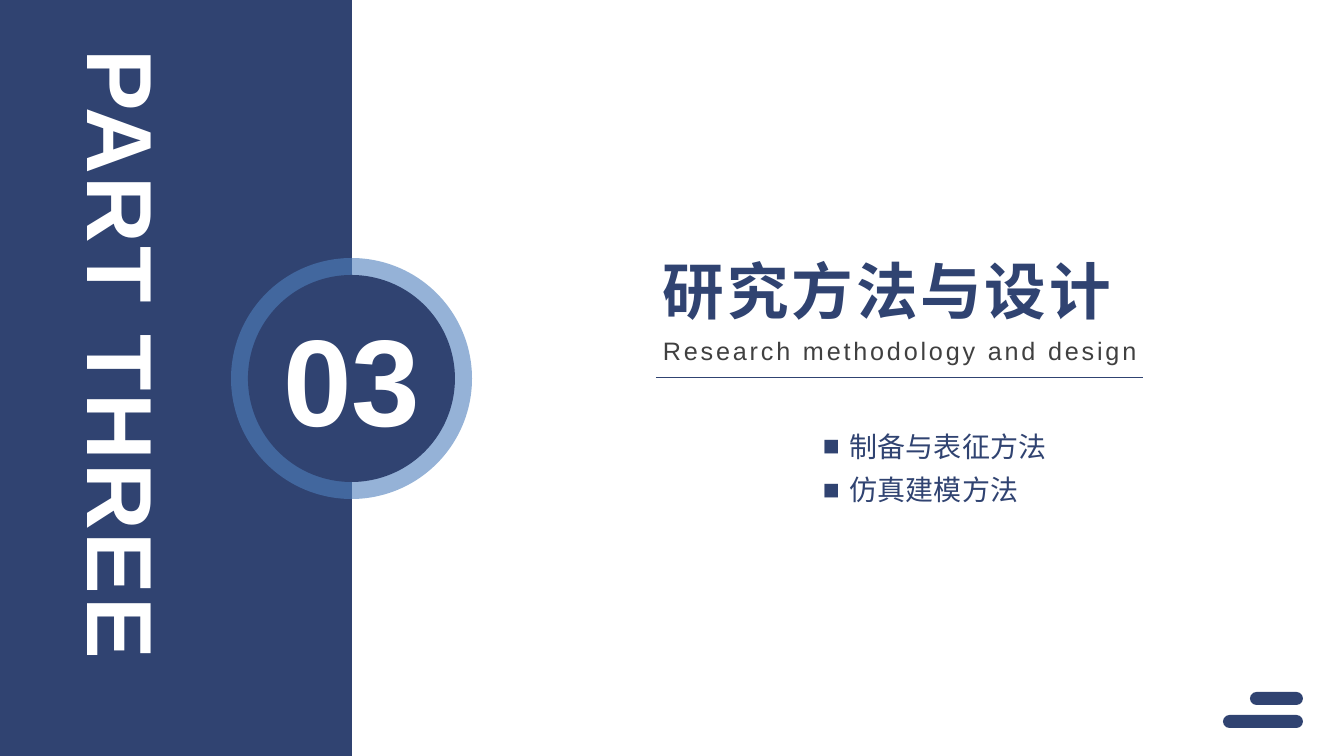
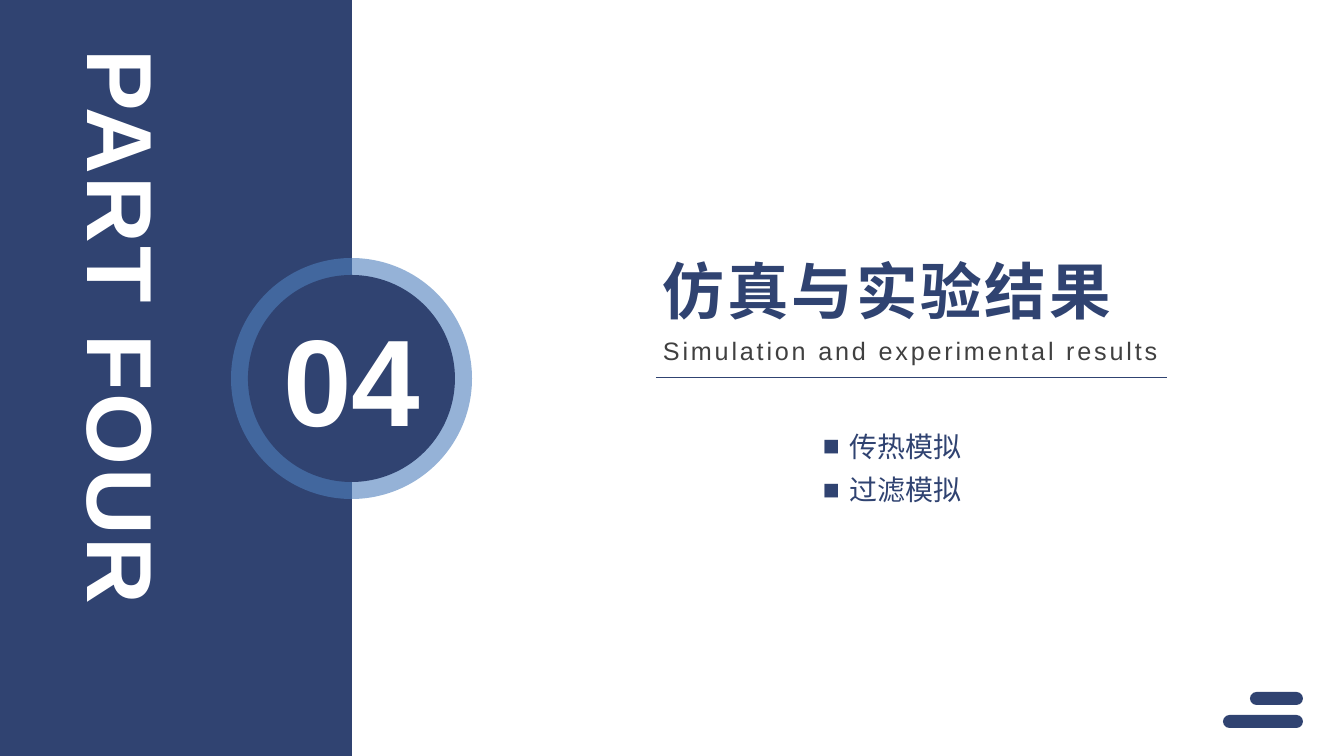
from pptx import Presentation
from pptx.dml.color import RGBColor
from pptx.enum.lang import MSO_LANGUAGE_ID
from pptx.enum.shapes import MSO_CONNECTOR, MSO_SHAPE
from pptx.enum.text import MSO_ANCHOR, PP_ALIGN
from pptx.oxml.ns import qn
from pptx.oxml.xmlchemy import OxmlElement
from pptx.util import Emu, Pt

NAVY, BLUE, GREY, WHITE = "304371", "4F80BD", "404040", "FFFFFF"
FONT = "Arial"
WIDE, HIGH = 1344, 756
PARTS = [
    ("03", "PART THREE", "研究方法与设计", "Research methodology and design",
     487, ["制备与表征方法", "仿真建模方法"]),
    ("04", "PART FOUR", "仿真与实验结果", "Simulation and experimental results",
     511, ["传热模拟", "过滤模拟"]),
]


def px(*sizes):
    """Turn lengths in px into a list of EMU."""
    return [Emu(round(size * 914400 / 100.8)) for size in sizes]


def color(code):
    return RGBColor.from_string(code)


def child(parent, tag, **attrs):
    node = OxmlElement(tag)
    for key, value in attrs.items():
        node.set(key, value)
    parent.append(node)
    return node


def shape(shapes, kind, box, fill, alpha=None):
    item = shapes.add_shape(kind, *px(*box))
    item.shadow.inherit = False
    item.fill.solid()
    item.fill.fore_color.rgb = color(fill)
    item.line.fill.background()
    if alpha:
        tint = next(item.element.spPr.iter(qn("a:srgbClr")))
        child(tint, "a:alpha", val=str(alpha * 1000))
    return item


def bullet(para, indent, fill):
    """Hang the paragraph behind a square mark."""
    props = para._p.get_or_add_pPr()
    hang = px(indent)[0]
    props.set("marL", str(hang))
    props.set("indent", str(-hang))
    child(child(props, "a:buClr"), "a:srgbClr", val=fill)
    child(props, "a:buFont", typeface=FONT)
    child(props, "a:buChar", char="■")


def text(slide, box, lines, size, fill=NAVY, bold=False, gap=0, lead=None,
         align=PP_ALIGN.LEFT, anchor=MSO_ANCHOR.TOP, vert=None, indent=0):
    item = slide.shapes.add_textbox(*px(*box))
    frame = item.text_frame
    frame.word_wrap = True
    frame.vertical_anchor = anchor
    if vert:
        item.element.txBody.bodyPr.set("vert", vert)
    for num, line in enumerate(lines):
        para = frame.add_paragraph() if num else frame.paragraphs[0]
        para.alignment = align
        if lead:
            para.line_spacing = lead
        if indent:
            bullet(para, indent, fill)
        run = para.add_run()
        run.text = line
        font = run.font
        font.name, font.size, font.bold = FONT, Pt(size), bold
        font.color.rgb = color(fill)
        if not line.isascii():
            font.language_id = MSO_LANGUAGE_ID.SIMPLIFIED_CHINESE
        props = run._r.get_or_add_rPr()
        child(props, "a:ea", typeface=FONT)
        if gap:
            props.set("spc", str(gap * 100))


def panel(slide, box, num, part):
    """Side band with its vertical label and the number on its edge."""
    x, y, w, h = box
    shape(slide.shapes, MSO_SHAPE.RECTANGLE, box, NAVY)
    mid, ring, rim = y + h // 2, 241, 17
    left, top = x + w - 121, mid - 120
    disc = ring - 2 * rim
    shape(slide.shapes, MSO_SHAPE.OVAL, (left, top, ring, ring), BLUE, 60)
    shape(slide.shapes, MSO_SHAPE.OVAL,
          (left + rim, top + rim, disc, disc), NAVY)
    text(slide, (left, top + 40, ring, 159), [num], 88, WHITE, bold=True,
         align=PP_ALIGN.CENTER)
    text(slide, (x + 53, y + 40, 132, h - 80), [part], 66, WHITE, bold=True,
         gap=2, align=PP_ALIGN.CENTER, vert="eaVert")


def heading(slide, box, title, sub, rule):
    x, y, w, h = box
    text(slide, (x, y, w, 85), [title], 44, bold=True, gap=2,
         anchor=MSO_ANCHOR.MIDDLE)
    text(slide, (x, y + 83, w, 40), [sub], 18, GREY, gap=2)
    line = slide.shapes.add_connector(
        MSO_CONNECTOR.STRAIGHT, *px(x + 3, y + h, x + 3 + rule, y + h))
    line.line.color.rgb = color(NAVY)
    line.line.width = Pt(0.5)
    child(line.element.spPr, "a:effectLst")


def topics(slide, box, items):
    text(slide, box, items, 20, lead=1.3, indent=27)


def pills(slide, box):
    """Two round bars, flush right, at the top and foot of the box."""
    x, y, w, h = box
    group = slide.shapes.add_group_shape()
    thick = 13
    for size, top in ((w, y + h - thick), (53, y)):
        bar = shape(group.shapes, MSO_SHAPE.ROUNDED_RECTANGLE,
                    (x + w - size, top, size, thick), NAVY)
        bar.adjustments[0] = 0.5


def divider(deck, num, part, title, sub, rule, items):
    slide = deck.slides.add_slide(deck.slide_layouts[6])
    panel(slide, (0, 0, 352, HIGH), num, part)
    heading(slide, (653, 247, 560, 130), title, sub, rule)
    topics(slide, (813, 414, 280, 94), items)
    pills(slide, (1223, 692, 80, 36))


def main():
    deck = Presentation()
    deck.slide_width, deck.slide_height = px(WIDE, HIGH)
    for part in PARTS:
        divider(deck, *part)
    deck.save("out.pptx")


if __name__ == "__main__":
    main()
